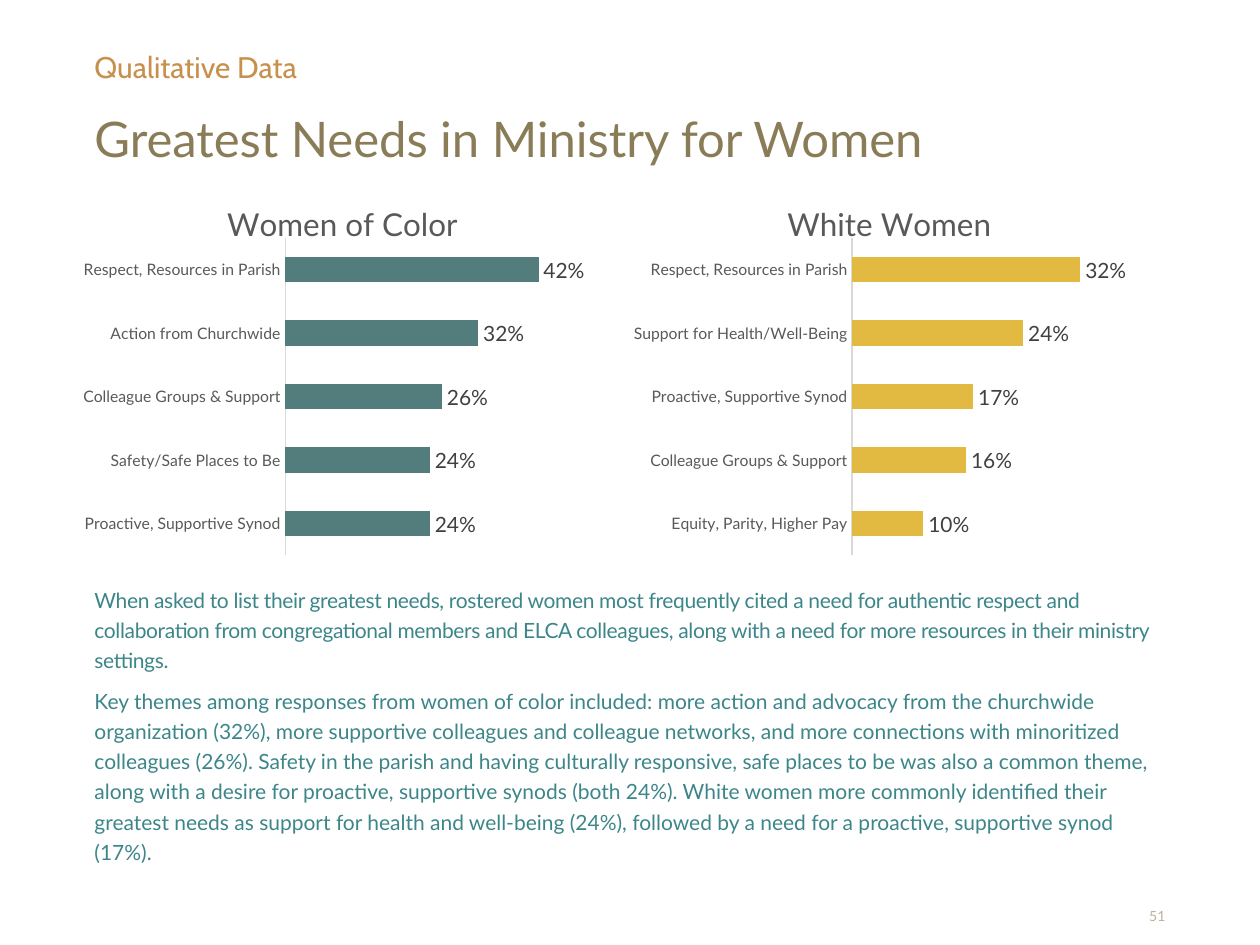
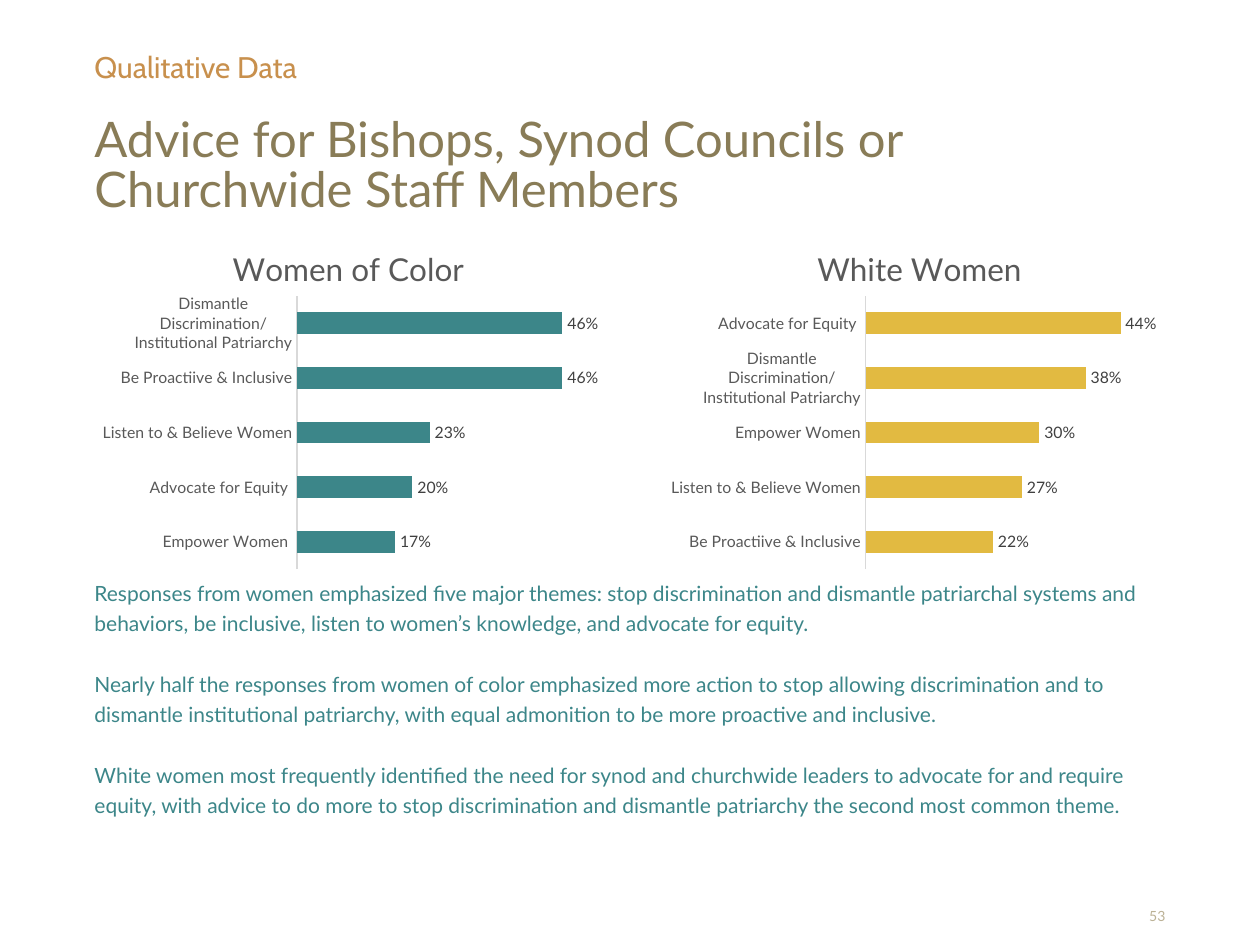
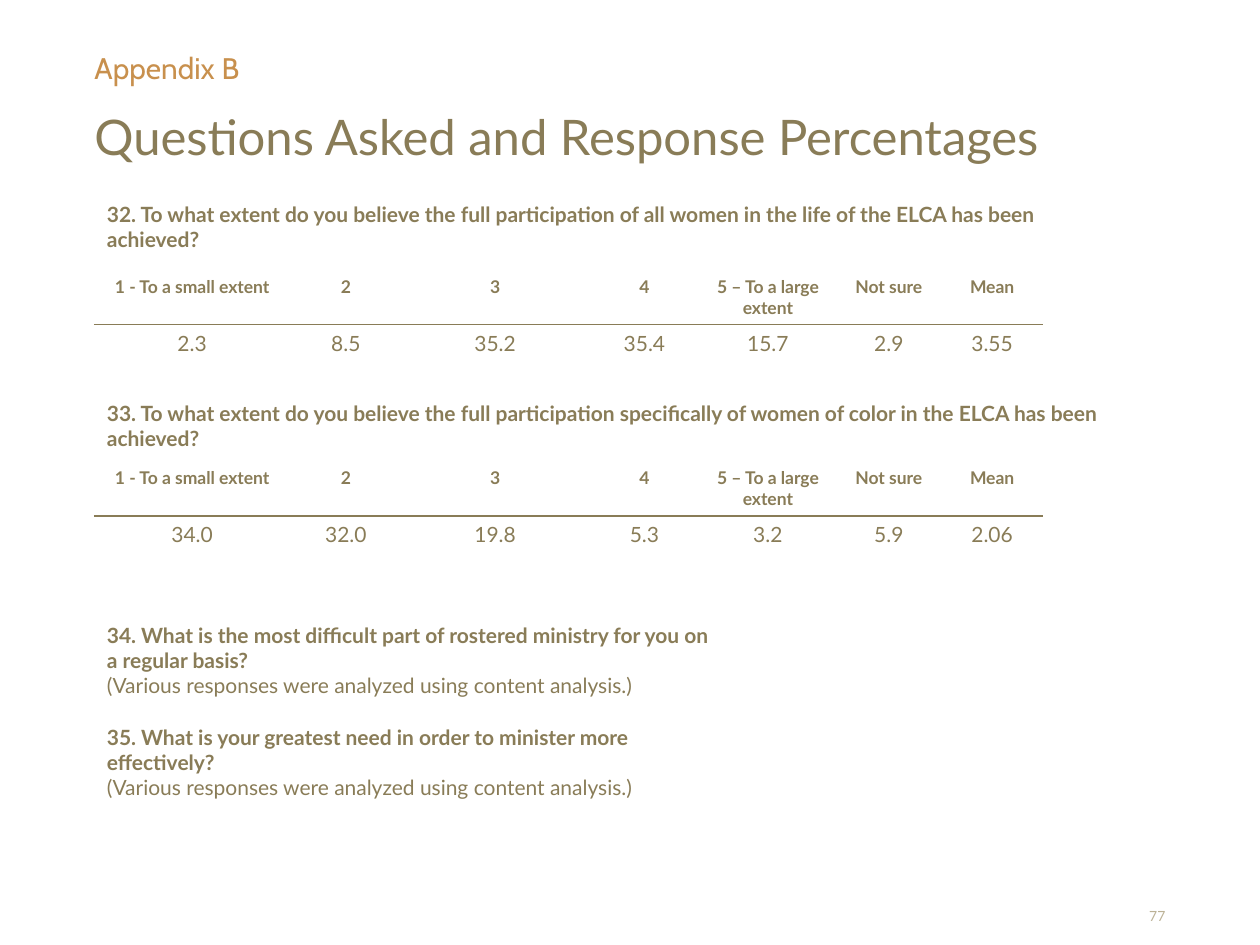
from dataclasses import dataclass
from typing import Any

import pptx
import pptx.chart.data
import pptx.dml.color
import pptx.enum.chart
import pptx.enum.text
import pptx.oxml
import pptx.oxml.ns
import pptx.util

Inches = pptx.util.Inches
Pt = pptx.util.Pt
ALIGN = pptx.enum.text.PP_ALIGN
ANCHOR = pptx.enum.text.MSO_ANCHOR

COLORS = {
    "olive": "897C57", "orange": "C8904D", "teal": "3C8689", "slate": "537D7C",
    "gold": "E2BA41", "sand": "BCB296", "gray": "595959", "dark": "404040",
    "light": "D9D9D9", "white": "FFFFFF",
}
FONT = "Lato"
MARGIN = 0.75
CONTENT_WIDTH = 8.5


@dataclass
class Box:
    left: float
    top: float
    width: float
    height: float

    def lengths(self) -> list[pptx.util.Length]:
        return [Inches(n) for n in (self.left, self.top, self.width, self.height)]


@dataclass
class TextStyle:
    size: float
    color: str
    font: str = FONT
    bold: bool = False
    line_spacing: float = 1.0
    align: Any = ALIGN.LEFT


@dataclass
class Line:
    text: str
    style: TextStyle
    before: float = 0
    after: float = 0
    tracking: int = 0


@dataclass
class BarChart:
    title: str
    box: Box
    title_at: tuple[float, float]
    plot: Box
    maximum: float
    color: str
    label_size: int
    values: dict[str, float]


@dataclass
class ScaleQuestion:
    text: str
    box: Box
    table_top: float
    answers: list[str]


EYEBROW = TextStyle(17, "orange", "Cabin", line_spacing=0.85)
TITLE = TextStyle(28, "olive", line_spacing=0.85)
BODY = TextStyle(12, "teal", line_spacing=1.2)
QUESTION = TextStyle(12, "olive", bold=True)
NOTE = TextStyle(12, "olive")
TABLE_HEAD = TextStyle(10, "olive", bold=True, align=ALIGN.CENTER)
TABLE_VALUE = TextStyle(12, "olive", align=ALIGN.CENTER)
PAGE_NUMBER = TextStyle(8, "sand", align=ALIGN.RIGHT)

SCALE = ["1 - To a small extent", "2", "3", "4", "5 – To a large extent", "Not sure", "Mean"]
SCALE_WIDTHS = [1.55, 0.89, 1.48, 0.89, 1.07, 0.85, 0.79]
ROW_HEIGHT = 0.41

NEEDS_CHARTS = [
    BarChart("Women of Color", Box(0.64, 1.26, 4, 3.21), (1.76, 1.55),
             Box(2.27, 1.89, 2.16, 2.52), 0.45, "slate", 12, {
                 "Proactive, Supportive Synod": 0.24,
                 "Safety/Safe Places to Be": 0.24,
                 "Colleague Groups & Support": 0.26,
                 "Action from Churchwide": 0.32,
                 "Respect, Resources in Parish": 0.42}),
    BarChart("White Women", Box(5, 1.26, 3.94, 3.21), (6.21, 1.55),
             Box(6.77, 1.89, 1.99, 2.52), 0.35, "gold", 12, {
                 "Equity, Parity, Higher Pay": 0.10,
                 "Colleague Groups & Support": 0.16,
                 "Proactive, Supportive Synod": 0.17,
                 "Support for Health/Well-Being": 0.24,
                 "Respect, Resources in Parish": 0.32}),
]
NEEDS_TEXT = [
    Line("When asked to list their greatest needs, rostered women most frequently cited a need "
         "for authentic respect and collaboration from congregational members and ELCA "
         "colleagues, along with a need for more resources in their ministry settings.",
         BODY, after=6, tracking=-20),
    Line("Key themes among responses from women of color included: more action and advocacy from "
         "the churchwide organization (32%), more supportive colleagues and colleague networks, "
         "and more connections with minoritized colleagues (26%). Safety in the parish and having "
         "culturally responsive, safe places to be was also a common theme, along with a desire "
         "for proactive, supportive synods (both 24%). White women more commonly identified their "
         "greatest needs as support for health and well-being (24%), followed by a need for a "
         "proactive, supportive synod (17%).", BODY),
]

ADVICE_CHARTS = [
    BarChart("Women of Color", Box(0.75, 1.73, 4, 2.84), (1.8, 1.91),
             Box(2.36, 2.35, 2.29, 2.17), 0.5, "teal", 9, {
                 "Empower Women ": 0.17,
                 "Advocate for Equity ": 0.20,
                 "Listen to & Believe Women": 0.23,
                 "Be Proactiive & Inclusive": 0.46,
                 "Dismantle Discrimination/Institutional Patriarchy": 0.46}),
    BarChart("White Women", Box(5.25, 1.73, 4, 2.84), (6.44, 1.91),
             Box(6.87, 2.35, 2.3, 2.17), 0.5, "gold", 9, {
                 "Be Proactiive & Inclusive": 0.22,
                 "Listen to & Believe Women": 0.27,
                 "Empower Women": 0.30,
                 "Dismantle Discrimination/Institutional Patriarchy": 0.38,
                 "Advocate for Equity ": 0.44}),
]
ADVICE_TEXT = [Line(text, BODY, after=17.3) for text in (
    "Responses from women emphasized five major themes: stop discrimination and dismantle "
    "patriarchal systems and behaviors, be inclusive, listen to women’s knowledge, and advocate "
    "for equity.",
    "Nearly half the responses from women of color emphasized more action to stop allowing "
    "discrimination and to dismantle institutional patriarchy, with equal admonition to be more "
    "proactive and inclusive.",
    "White women most frequently identified the need for synod and churchwide leaders to advocate "
    "for and require equity, with advice to do more to stop discrimination and dismantle "
    "patriarchy the second most common theme.")]

SCALE_QUESTIONS = [
    ScaleQuestion("32. To what extent do you believe the full participation of all women in the "
                  "life of the ELCA has been achieved?", Box(MARGIN, 1.65, 8.02, 0.3), 2.14,
                  ["2.3", "8.5", "35.2", "35.4", "15.7", "2.9", "3.55"]),
    ScaleQuestion("33. To what extent do you believe the full participation specifically of women "
                  "of color in the ELCA has been achieved?", Box(MARGIN, 3.23, 8.48, 0.3), 3.66,
                  ["34.0", "32.0", "19.8", "5.3", "3.2", "5.9", "2.06"]),
]
ANALYZED = "(Various responses were analyzed using content analysis.)"
OPEN_QUESTIONS = [
    Line("34. What is the most difficult part of rostered ministry for you on a regular basis?",
         QUESTION),
    Line(ANALYZED, NOTE),
    Line("35. What is your greatest need in order to minister more effectively?",
         QUESTION, before=15),
    Line(ANALYZED, NOTE),
]


def rgb(name: str) -> pptx.dml.color.RGBColor:
    return pptx.dml.color.RGBColor.from_string(COLORS[name])


def set_values(target: Any, values: dict[str, Any]) -> None:
    for name, value in values.items():
        setattr(target, name, value)


def set_font(font: Any, style: TextStyle) -> None:
    set_values(font, {"name": style.font, "size": Pt(style.size), "bold": style.bold})
    font.color.rgb = rgb(style.color)


def fill_paragraph(paragraph: Any, line: Line) -> None:
    set_values(paragraph, {"alignment": line.style.align,
                           "line_spacing": line.style.line_spacing,
                           "space_before": Pt(line.before), "space_after": Pt(line.after)})
    run = paragraph.add_run()
    run.text = line.text
    set_font(run.font, line.style)
    if line.tracking:
        run.font._element.set("spc", str(line.tracking))


def add_text(slide: Any, box: Box, lines: list[Line], anchor: Any = ANCHOR.TOP,
             padded: bool = False) -> None:
    frame = slide.shapes.add_textbox(*box.lengths()).text_frame
    set_values(frame, {"word_wrap": True, "vertical_anchor": anchor})
    if not padded:
        set_values(frame, {f"margin_{side}": 0 for side in ("left", "top", "right", "bottom")})
    for index, line in enumerate(lines):
        fill_paragraph(frame.add_paragraph() if index else frame.paragraphs[0], line)


def add_page(presentation: Any, eyebrow: str, title: str, number: int,
             eyebrow_top: float = 0.43, title_top: float = 0.93) -> Any:
    """Add a blank slide with the shared heading and page number."""
    slide = presentation.slides.add_slide(presentation.slide_layouts[6])
    add_text(slide, Box(MARGIN, eyebrow_top, CONTENT_WIDTH, 0.49), [Line(eyebrow, EYEBROW)])
    add_text(slide, Box(MARGIN, title_top, CONTENT_WIDTH, 0.74), [Line(title, TITLE)])
    add_text(slide, Box(8.93, 7.21, 0.32, 0.13), [Line(str(number), PAGE_NUMBER)], ANCHOR.BOTTOM)
    return slide


def manual_layout(values: dict[str, float], inner: bool = False) -> Any:
    """Return a c:layout element placing a chart part by fractions of the chart."""
    target = '<c:layoutTarget val="inner"/>' if inner else ""
    places = "".join(f'<c:{name} val="{value:.3f}"/>' for name, value in values.items())
    return pptx.oxml.parse_xml(
        f'<c:layout {pptx.oxml.ns.nsdecls("c")}><c:manualLayout>{target}'
        f'<c:xMode val="edge"/><c:yMode val="edge"/>{places}</c:manualLayout></c:layout>')


def replace_layout(parent: Any, layout: Any, index: int) -> None:
    for old in parent.findall(pptx.oxml.ns.qn("c:layout")):
        parent.remove(old)
    parent.insert(index, layout)


def add_bar_chart(slide: Any, bars: BarChart) -> None:
    data = pptx.chart.data.CategoryChartData(number_format="0%")
    data.categories = list(bars.values)
    data.add_series(bars.title, list(bars.values.values()))
    chart = slide.shapes.add_chart(pptx.enum.chart.XL_CHART_TYPE.BAR_CLUSTERED,
                                   *bars.box.lengths(), data).chart
    chart.has_legend = False
    set_font(chart.font, TextStyle(10, "gray"))
    fill_paragraph(chart.chart_title.text_frame.paragraphs[0],
                   Line(bars.title, TextStyle(18, "gray")))
    chart.chart_title.include_in_layout = False

    box, plot_box = bars.box, bars.plot
    title_left, title_top = bars.title_at
    replace_layout(chart.chart_title._element, manual_layout({
        "x": (title_left - box.left) / box.width,
        "y": (title_top - box.top) / box.height}), 1)
    replace_layout(chart._chartSpace.chart.plotArea, manual_layout({
        "x": (plot_box.left - box.left) / box.width,
        "y": (plot_box.top - box.top) / box.height,
        "w": plot_box.width / box.width,
        "h": plot_box.height / box.height}, inner=True), 0)

    no_tick = pptx.enum.chart.XL_TICK_MARK.NONE
    set_values(chart.value_axis, {"visible": False, "has_major_gridlines": False,
                                  "minimum_scale": 0, "maximum_scale": bars.maximum})
    axis = chart.category_axis
    set_values(axis, {"major_tick_mark": no_tick, "minor_tick_mark": no_tick,
                      "has_major_gridlines": False})
    set_font(axis.tick_labels.font, TextStyle(9, "gray"))
    axis.format.line.width = Pt(0.75)
    axis.format.line.color.rgb = rgb("light")

    plot = chart.plots[0]
    set_values(plot, {"gap_width": 150, "overlap": -25, "vary_by_categories": False,
                      "has_data_labels": True})
    set_values(plot.data_labels, {
        "show_value": True, "number_format": "0%", "number_format_is_linked": False,
        "position": pptx.enum.chart.XL_LABEL_POSITION.OUTSIDE_END})
    set_font(plot.data_labels.font, TextStyle(bars.label_size, "dark"))
    fill = plot.series[0].format.fill
    fill.solid()
    fill.fore_color.rgb = rgb(bars.color)


def set_borders(cell: Any, colors: dict[str, str]) -> None:
    properties = cell._tc.get_or_add_tcPr()
    for index, (side, color) in enumerate(colors.items()):
        properties.insert(index, pptx.oxml.parse_xml(
            f'<a:ln{side} {pptx.oxml.ns.nsdecls("a")} w="{Pt(1)}"><a:solidFill>'
            f'<a:srgbClr val="{COLORS[color]}"/></a:solidFill></a:ln{side}>'))


def add_scale_question(slide: Any, question: ScaleQuestion) -> None:
    add_text(slide, question.box, [Line(question.text, QUESTION)], ANCHOR.MIDDLE, padded=True)
    rows = [(SCALE, TABLE_HEAD, {"T": "white", "B": "olive"}),
            (question.answers, TABLE_VALUE, {"T": "olive", "B": "white"})]
    box = Box(MARGIN, question.table_top, sum(SCALE_WIDTHS), ROW_HEIGHT * len(rows))
    table = slide.shapes.add_table(len(rows), len(SCALE), *box.lengths()).table
    set_values(table, {"first_row": False, "horz_banding": False})
    for column, width in zip(table.columns, SCALE_WIDTHS):
        column.width = Inches(width)
    for row, (texts, style, edges) in zip(table.rows, rows):
        row.height = Inches(ROW_HEIGHT)
        for cell, text in zip(row.cells, texts):
            fill_paragraph(cell.text_frame.paragraphs[0], Line(text, style))
            cell.fill.background()
            set_borders(cell, {"L": "white", "R": "white", **edges})


def main() -> None:
    presentation = pptx.Presentation()
    set_values(presentation, {"slide_width": Inches(10), "slide_height": Inches(7.5)})

    needs = add_page(presentation, "Qualitative Data", "Greatest Needs in Ministry for Women", 51)
    for bars in NEEDS_CHARTS:
        add_bar_chart(needs, bars)
    add_text(needs, Box(MARGIN, 4.62, CONTENT_WIDTH, 2.09), NEEDS_TEXT)

    advice = add_page(presentation, "Qualitative Data",
                      "Advice for Bishops, Synod Councils or Churchwide Staff Members", 53)
    for bars in ADVICE_CHARTS:
        add_bar_chart(advice, bars)
    add_text(advice, Box(MARGIN, 4.57, CONTENT_WIDTH, 1.92), ADVICE_TEXT)

    appendix = add_page(presentation, "Appendix B", "Questions Asked and Response Percentages",
                        77, eyebrow_top=0.44, title_top=0.92)
    for question in SCALE_QUESTIONS:
        add_scale_question(appendix, question)
    add_text(appendix, Box(MARGIN, 4.89, 5, 1.33), OPEN_QUESTIONS, padded=True)

    presentation.save("out.pptx")


if __name__ == "__main__":
    main()
